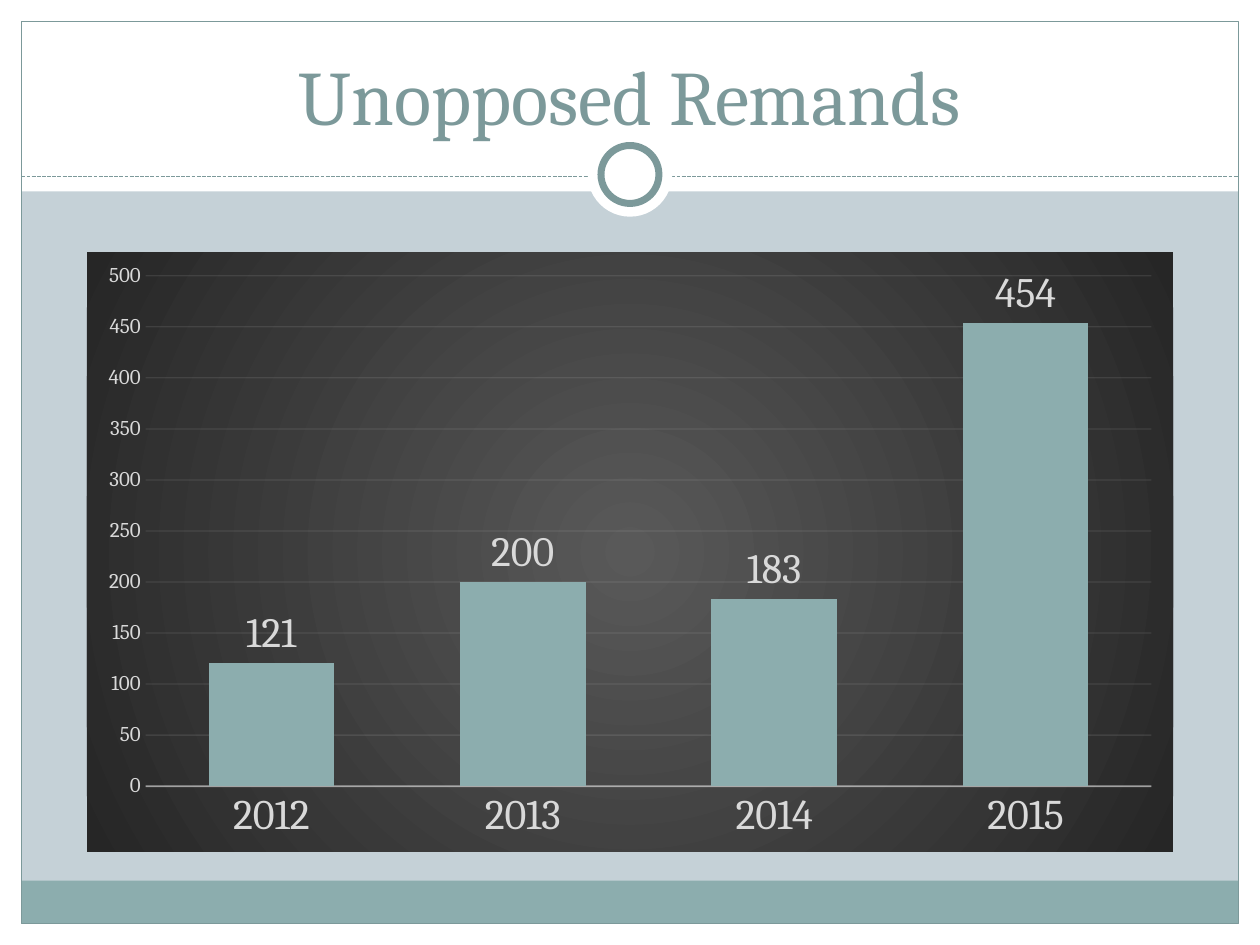
from dataclasses import dataclass
from typing import Optional

from lxml import etree
from pptx import Presentation
from pptx import util as u
from pptx.chart import data
from pptx.dml.color import RGBColor
from pptx.enum import chart as charts
from pptx.enum import dml, shapes, text
from pptx.oxml import parse_xml
from pptx.oxml.ns import qn

WHITE = RGBColor(0xFF, 0xFF, 0xFF)
MIST = RGBColor(0xC5, 0xD1, 0xD7)
TEAL = RGBColor(0x8C, 0xAD, 0xAE)
SLATE = RGBColor(0x7C, 0x99, 0x9A)
PALE = RGBColor(0xD9, 0xD9, 0xD9)
AXIS = RGBColor(0xF2, 0xF2, 0xF2)
CENTRE_GREY = RGBColor(0x59, 0x59, 0x59)
EDGE_GREY = RGBColor(0x26, 0x26, 0x26)
FONT = "Cambria"

COLUMNS, ROWS = 100, 75
WIDTH, HEIGHT = u.Inches(10), u.Inches(7.5)
MARGIN = 1.7
REMANDS = {"2012": 121, "2013": 200, "2014": 183, "2015": 454}


@dataclass(frozen=True)
class Area:
    left: float
    top: float
    width: float
    height: float

    def place(self) -> tuple[int, int, int, int]:
        return (across(self.left), down(self.top), across(self.width), down(self.height))


@dataclass(frozen=True)
class Panel:
    area: Area
    fill: Optional[RGBColor] = None
    line: Optional[RGBColor] = None
    weight: float = 0.75
    kind: shapes.MSO_SHAPE = shapes.MSO_SHAPE.RECTANGLE


def across(columns: float) -> int:
    return round(WIDTH * columns / COLUMNS)


def down(rows: float) -> int:
    return round(HEIGHT * rows / ROWS)


def circle(diameter: float, fill: RGBColor, line: Optional[RGBColor] = None) -> Panel:
    area = Area((COLUMNS - diameter) / 2, 13.85 - diameter / 2, diameter, diameter)
    return Panel(area, fill, line, 4, shapes.MSO_SHAPE.OVAL)


INNER_WIDTH = COLUMNS - 2 * MARGIN
INNER_HEIGHT = ROWS - 2 * MARGIN
FRAME = [
    Panel(Area(0, ROWS - MARGIN, COLUMNS, MARGIN), WHITE),
    Panel(Area(0, 0, COLUMNS, 15.2), WHITE),
    Panel(Area(0, 0, MARGIN, ROWS), WHITE),
    Panel(Area(COLUMNS - MARGIN, 0, MARGIN, ROWS), WHITE),
    Panel(Area(MARGIN, 69.9, INNER_WIDTH, 3.4), TEAL),
    Panel(Area(MARGIN, MARGIN, INNER_WIDTH, INNER_HEIGHT), line=SLATE),
]
RING = [circle(6.7, WHITE), circle(4.6, WHITE, SLATE)]


def draw_panel(page, panel: Panel) -> None:
    shape = page.shapes.add_shape(panel.kind, *panel.area.place())
    shape.shadow.inherit = False
    if panel.fill is None:
        shape.fill.background()
    else:
        shape.fill.solid()
        shape.fill.fore_color.rgb = panel.fill
    if panel.line is None:
        shape.line.fill.background()
    else:
        shape.line.color.rgb = panel.line
        shape.line.width = u.Pt(panel.weight)


def draw_divider(page) -> None:
    height = down(14)
    divider = page.shapes.add_connector(
        shapes.MSO_CONNECTOR.STRAIGHT, across(MARGIN), height, across(COLUMNS - MARGIN), height
    )
    divider.line.color.rgb = SLATE
    divider.line.width = u.Pt(0.75)
    divider.line.dash_style = dml.MSO_LINE.SQUARE_DOT
    etree.SubElement(divider._element.spPr, qn("a:effectLst"))


def draw_title(page, wording: str) -> None:
    box = page.shapes.add_textbox(*Area(6, 1.2, 88, 10.5).place())
    box.text_frame.word_wrap = True
    box.text_frame.vertical_anchor = text.MSO_ANCHOR.BOTTOM
    para = box.text_frame.paragraphs[0]
    para.alignment = text.PP_ALIGN.CENTER
    span = para.add_run()
    span.text = wording
    style_font(span.font, 44, SLATE)


def style_font(font, size: float, color: RGBColor) -> None:
    font.name = FONT
    font.size = u.Pt(size)
    font.bold = False
    font.color.rgb = color


def style_line(line, weight: float, opacity: int) -> None:
    line.color.rgb = AXIS
    line.width = u.Pt(weight)
    for color in line._get_or_add_ln().iter(qn("a:srgbClr")):
        etree.SubElement(color, qn("a:alpha"), val=str(opacity * 1000))


def shade_chart(chart) -> None:
    backdrop = parse_xml(
        '<c:spPr xmlns:c="http://schemas.openxmlformats.org/drawingml/2006/chart"'
        ' xmlns:a="http://schemas.openxmlformats.org/drawingml/2006/main">'
        '<a:gradFill><a:gsLst>'
        f'<a:gs pos="0"><a:srgbClr val="{CENTRE_GREY}"/></a:gs>'
        f'<a:gs pos="100000"><a:srgbClr val="{EDGE_GREY}"/></a:gs>'
        '</a:gsLst><a:path path="circle">'
        '<a:fillToRect l="50000" t="50000" r="50000" b="50000"/>'
        '</a:path></a:gradFill><a:ln><a:noFill/></a:ln></c:spPr>'
    )
    chart._chartSpace.find(qn("c:chart")).addnext(backdrop)


def draw_chart(page, values: dict[str, int]) -> None:
    table = data.CategoryChartData()
    table.categories = list(values)
    table.add_series("Series 1", list(values.values()))
    chart = page.shapes.add_chart(
        charts.XL_CHART_TYPE.COLUMN_CLUSTERED, *Area(6.9, 20, 86.2, 47.6).place(), table
    ).chart
    chart.has_title = False
    chart.has_legend = False
    style_font(chart.font, 10, PALE)
    shade_chart(chart)

    for axis, size in ((chart.category_axis, 24.1), (chart.value_axis, 12)):
        axis.major_tick_mark = charts.XL_TICK_MARK.NONE
        axis.minor_tick_mark = charts.XL_TICK_MARK.NONE
        style_font(axis.tick_labels.font, size, PALE)
    style_line(chart.category_axis.format.line, 1, 54)
    amounts = chart.value_axis
    amounts.minimum_scale, amounts.maximum_scale, amounts.major_unit = 0, 500, 50
    amounts.format.line.fill.background()
    style_line(amounts.major_gridlines.format.line, 0.75, 10)

    plot = chart.plots[0]
    plot.gap_width = 100
    plot.overlap = -24
    plot.vary_by_categories = False
    series = plot.series[0]
    series.format.fill.solid()
    series.format.fill.fore_color.rgb = TEAL
    labels = series.data_labels
    labels.show_value = True
    labels.position = charts.XL_LABEL_POSITION.OUTSIDE_END
    style_font(labels.font, 23.9, PALE)


def main() -> None:
    deck = Presentation()
    deck.slide_width, deck.slide_height = WIDTH, HEIGHT
    page = deck.slides.add_slide(deck.slide_layouts[6])
    page.background.fill.solid()
    page.background.fill.fore_color.rgb = MIST
    for panel in FRAME:
        draw_panel(page, panel)
    draw_divider(page)
    for panel in RING:
        draw_panel(page, panel)
    draw_title(page, "Unopposed Remands")
    draw_chart(page, REMANDS)
    deck.save("out.pptx")


if __name__ == "__main__":
    main()
